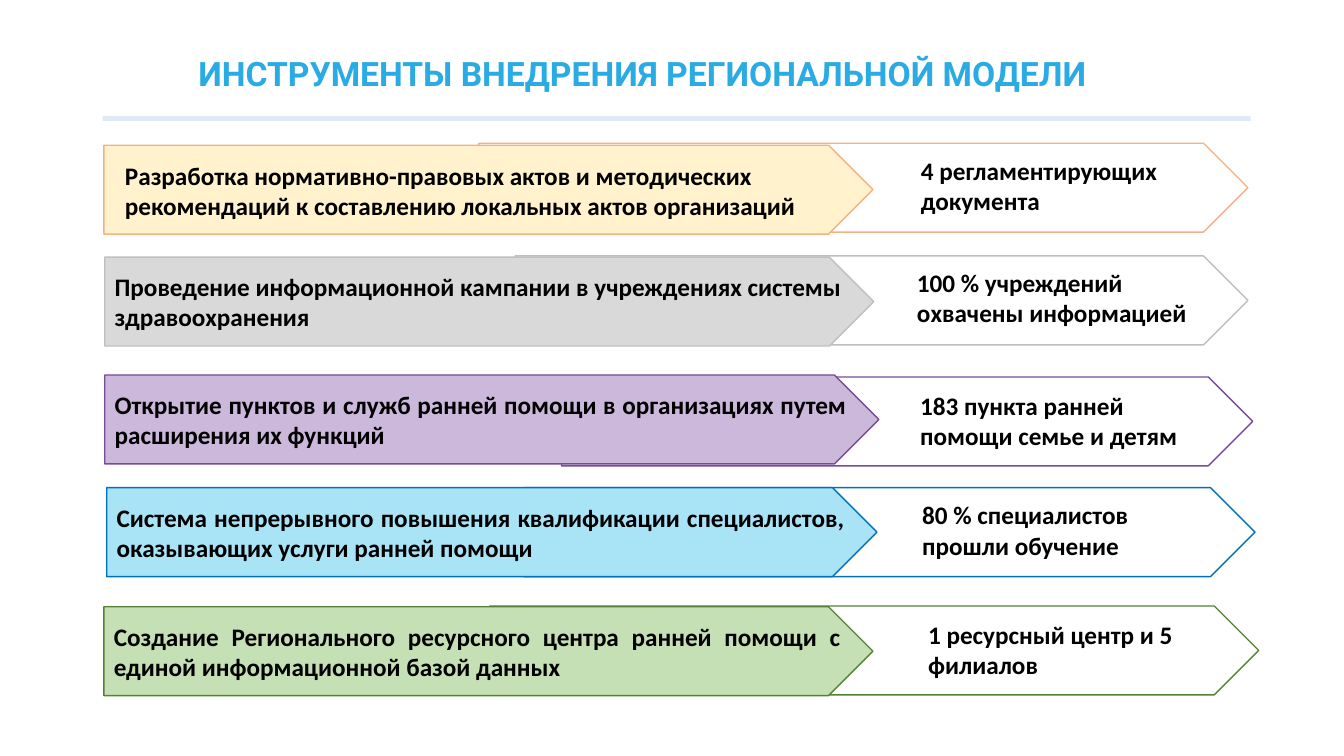
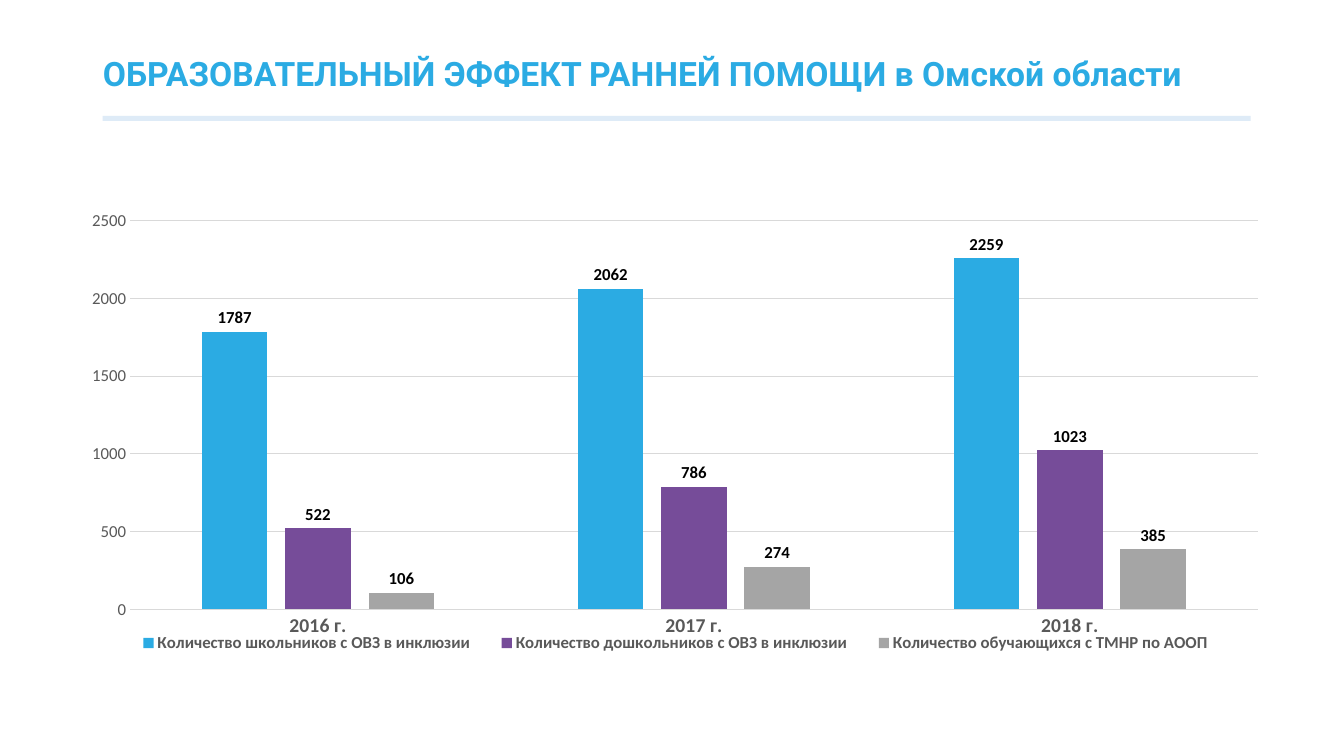
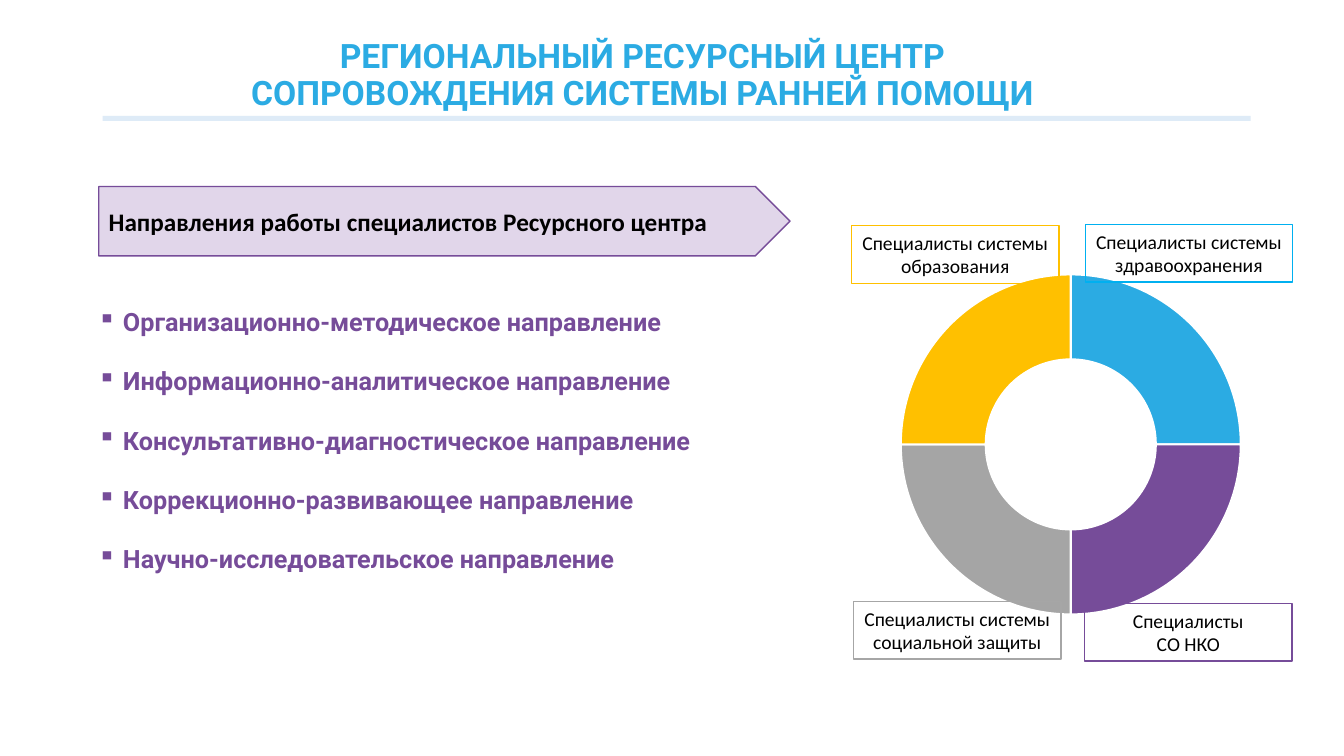
from lxml.etree import SubElement
from pptx import Presentation
from pptx.chart.data import CategoryChartData
from pptx.dml.color import RGBColor
from pptx.enum.chart import XL_CHART_TYPE, XL_LABEL_POSITION, XL_LEGEND_POSITION, XL_TICK_MARK
from pptx.enum.shapes import MSO_SHAPE
from pptx.enum.text import MSO_ANCHOR, PP_ALIGN
from pptx.oxml.ns import qn
from pptx.util import Cm, Pt

COLORS = {
    "sky": "2BABE3", "band": "DEEBF7", "black": "000000", "white": "FFFFFF",
    "purple": "764C99", "lilac": "CBB8DA", "pale_lilac": "E1D6EA",
    "peach": "F4B183", "cream": "FFF2CC", "silver": "BFBFBF", "light_gray": "D9D9D9",
    "blue": "0070C0", "pale_blue": "A8E3F6", "green": "548235", "pale_green": "C5E0B4",
    "gray": "A5A5A5", "box_gray": "A6A6A6", "amber": "FFC000", "cyan": "00B0F0",
    "axis_text": "595959",
}
TITLE = {"name": "Roboto", "size": Pt(24), "bold": True}
STRONG = {"name": "Calibri", "size": Pt(18), "bold": True}
PLAIN = {"name": "Calibri", "size": Pt(14), "bold": False}
BULLET = {"name": "Roboto", "size": Pt(18), "bold": True}
CENTERED = {"alignment": PP_ALIGN.CENTER}
JUSTIFIED = {"alignment": PP_ALIGN.JUSTIFY}
LEFT = {"alignment": PP_ALIGN.LEFT}
ROW_H = 2.24

ROWS = [
    {"at": (2.62, 3.66), "width": 19.38, "fill": "cream", "line": "peach",
     "back": (9.45, -0.05, 19.38), "note_at": (20.34, 0.13), "inset": True,
     "text": "Разработка нормативно-правовых актов и методических рекомендаций "
             "к составлению локальных актов организаций",
     "note": "4 регламентирующих документа"},
    {"at": (2.64, 6.48), "width": 19.38, "fill": "light_gray", "line": "silver",
     "back": (10.34, -0.03, 18.47), "note_at": (20.22, 0.13), "inset": False,
     "text": "Проведение информационной кампании в учреждениях системы здравоохранения",
     "note": "100 % учреждений охвачены информацией"},
    {"at": (2.64, 9.45), "width": 19.51, "fill": "lilac", "line": "purple",
     "back": (11.51, 0.05, 17.42), "note_at": (20.3, 0.25), "inset": False,
     "text": "Открытие пунктов и служб ранней помощи в организациях путем расширения их функций",
     "note": "183 пункта ранней помощи семье и детям"},
    {"at": (2.69, 12.29), "width": 19.41, "fill": "pale_blue", "line": "blue",
     "back": (10.52, 0, 18.42), "note_at": (20.3, 0.18), "inset": False,
     "text": "Система непрерывного повышения квалификации специалистов, "
             "оказывающих услуги ранней помощи",
     "note": "80 % специалистов прошли обучение"},
    {"at": (2.62, 15.29), "width": 19.38, "fill": "pale_green", "line": "green",
     "back": (9.72, -0.02, 19.38), "note_at": (20.52, 0.18), "inset": False,
     "text": "Создание Регионального ресурсного центра ранней помощи "
             "с единой информационной базой данных",
     "note": "1 ресурсный центр и 5 филиалов"},
]
YEARS = ["2016 г.", "2017 г.", "2018 г."]
PUPILS = [
    ("Количество школьников с ОВЗ в инклюзии", (1787, 2062, 2259), "sky"),
    ("Количество дошкольников с ОВЗ в инклюзии", (522, 786, 1023), "purple"),
    ("Количество обучающихся с ТМНР по АООП", (106, 274, 385), "gray"),
]
DIRECTIONS = [
    "Организационно-методическое направление",
    "Информационно-аналитическое направление",
    "Консультативно-диагностическое направление",
    "Коррекционно-развивающее направление",
    "Научно-исследовательское направление",
]
SPECIALISTS = [
    (-0.89, -0.15, "amber", ["Специалисты системы образования"]),
    (5, -0.18, "cyan", ["Специалисты системы здравоохранения"]),
    (4.98, 9.37, "purple", ["Специалисты", "СО НКО"]),
    (-0.84, 9.32, "box_gray", ["Специалисты системы социальной защиты"]),
]


def rgb(name):
    return RGBColor.from_string(COLORS[name])


def box(*lengths):
    return [Cm(v) for v in lengths]


def apply(obj, values):
    for key, value in values.items():
        setattr(obj, key, value)


def style(font, values, color):
    apply(font, values)
    font.color.rgb = rgb(color)


def write(tf, lines, font, para, color="black", anchor=MSO_ANCHOR.MIDDLE):
    apply(tf, {"word_wrap": True, "vertical_anchor": anchor})
    for i, line in enumerate(lines):
        p = tf.add_paragraph() if i else tf.paragraphs[0]
        apply(p, para)
        r = p.add_run()
        r.text = line
        style(r.font, font, color)


def add_text(s, at, *args, **kwargs):
    write(s.shapes.add_textbox(*box(*at)).text_frame, *args, **kwargs)


def add_outline(s, kind, at, fill=None, line=None):
    sp = s.shapes.add_shape(kind, *box(*at))
    sp.shadow.inherit = False
    if fill:
        sp.fill.solid()
        sp.fill.fore_color.rgb = rgb(fill)
    else:
        sp.fill.background()
    if line:
        sp.line.color.rgb = rgb(line)
        sp.line.width = Pt(1)
    else:
        sp.line.fill.background()
    return sp


def add_titled_slide(prs, lines):
    s = prs.slides.add_slide(prs.slide_layouts[6])
    add_text(s, (2.34, 0.81, 27.7, 2.21), lines, TITLE, {**CENTERED, "line_spacing": 0.9}, "sky")
    add_outline(s, MSO_SHAPE.RECTANGLE, (2.59, 2.92, 28.93, 0.13), "band")
    return s


def add_tool_row(s, row):
    x, y = row["at"]
    dx, dy, back_w = row["back"]
    add_outline(s, MSO_SHAPE.PENTAGON, (x + dx, y + dy, back_w, ROW_H), line=row["line"])
    sp = add_outline(s, MSO_SHAPE.PENTAGON, (x, y, row["width"], ROW_H), row["fill"], row["line"])
    if row["inset"]:
        add_text(s, (x + 0.28, y + 0.25, 18.19, 1.8), [row["text"]], STRONG, LEFT,
                 anchor=MSO_ANCHOR.TOP)
    else:
        write(sp.text_frame, [row["text"]], STRONG, JUSTIFIED)
    nx, ny = row["note_at"]
    add_text(s, (x + nx, y + ny, 7.44, 1.8), [row["note"]], STRONG, LEFT, anchor=MSO_ANCHOR.TOP)


def set_layout(parent, index, sizes, inner=False):
    for old in parent.findall(qn("c:layout")):
        parent.remove(old)
    layout = SubElement(parent, qn("c:layout"))
    parent.insert(index, layout)
    manual = SubElement(layout, qn("c:manualLayout"))
    values = {"layoutTarget": "inner"} if inner else {}
    values.update({"xMode": "edge", "yMode": "edge"}, **sizes)
    for tag, value in values.items():
        SubElement(manual, qn("c:" + tag)).set("val", str(value))


def add_chart(s, kind, at, categories, series):
    data = CategoryChartData()
    data.categories = categories
    for name, values in series:
        data.add_series(name, values)
    chart = s.shapes.add_chart(kind, *box(*at), data).chart
    apply(chart, {"has_title": False, "has_legend": False})
    style(chart.font, {"name": "Calibri", "size": Pt(10)}, "black")
    return chart


def add_pupil_chart(s, at):
    chart = add_chart(s, XL_CHART_TYPE.COLUMN_CLUSTERED, at, YEARS, [row[:2] for row in PUPILS])
    plot = chart.plots[0]
    apply(plot, {"gap_width": 219, "overlap": -27, "vary_by_categories": False})
    for series, (_, _, color) in zip(plot.series, PUPILS):
        series.format.fill.solid()
        series.format.fill.fore_color.rgb = rgb(color)
        labels = series.data_labels
        apply(labels, {"show_value": True, "position": XL_LABEL_POSITION.OUTSIDE_END})
        style(labels.font, {**STRONG, "size": Pt(12)}, "black")
    cat, val = chart.category_axis, chart.value_axis
    for axis, size, bold in ((cat, 14, True), (val, 12, False)):
        apply(axis, {"major_tick_mark": XL_TICK_MARK.NONE, "minor_tick_mark": XL_TICK_MARK.NONE})
        style(axis.tick_labels.font, {**PLAIN, "size": Pt(size), "bold": bold}, "axis_text")
    val.format.line.fill.background()
    for line in (cat.format.line, val.major_gridlines.format.line):
        line.color.rgb = rgb("light_gray")
        line.width = Pt(0.75)
    chart.has_legend = True
    legend = chart.legend
    apply(legend, {"position": XL_LEGEND_POSITION.BOTTOM, "include_in_layout": False})
    style(legend.font, {**STRONG, "size": Pt(12)}, "axis_text")
    set_layout(chart._chartSpace.chart.plotArea, 0,
               {"x": 0.05, "y": 0.04, "w": 0.93, "h": 0.81}, inner=True)
    set_layout(legend._element, 1, {"x": 0.04, "y": 0.89, "w": 0.92, "h": 0.06})


def add_directions(s, x, y):
    sp = add_outline(s, MSO_SHAPE.PENTAGON, (x, y, 17.42, 1.75), "pale_lilac", "purple")
    write(sp.text_frame, ["Направления работы специалистов Ресурсного центра"], STRONG, JUSTIFIED)
    tb = s.shapes.add_textbox(*box(x - 0.28, y + 2.51, 18.34, 9.5))
    write(tb.text_frame, DIRECTIONS, BULLET,
          {**JUSTIFIED, "line_spacing": 1.5, "space_before": Pt(10)}, "purple", MSO_ANCHOR.TOP)
    for p in tb.text_frame.paragraphs:
        pPr = p._p.get_or_add_pPr()
        pPr.set("marL", str(Cm(0.64)))
        pPr.set("indent", str(Cm(-0.64)))
        color = SubElement(pPr, qn("a:buClr"))
        SubElement(color, qn("a:srgbClr")).set("val", COLORS["purple"])
        SubElement(pPr, qn("a:buChar")).set("char", "▪")


def add_specialist_ring(s, x, y):
    chart = add_chart(s, XL_CHART_TYPE.DOUGHNUT, (x, y, 9.27, 10.72),
                      ["1", "2", "3", "4"], [("Series 1", (25, 25, 25, 25))])
    plot = chart.plots[0]
    plot._element.find(qn("c:holeSize")).set("val", "75")
    for i, color in enumerate(("sky", "purple", "gray", "amber")):
        fmt = plot.series[0].points[i].format
        fmt.fill.solid()
        fmt.fill.fore_color.rgb = rgb(color)
        fmt.line.color.rgb = rgb("white")
        fmt.line.width = Pt(1.5)
    for dx, dy, color, lines in SPECIALISTS:
        sp = add_outline(s, MSO_SHAPE.RECTANGLE, (x + dx, y + dy, 5.23, 1.45), line=color)
        write(sp.text_frame, lines, PLAIN, CENTERED, anchor=MSO_ANCHOR.TOP)


def main():
    prs = Presentation()
    apply(prs, {"slide_width": Cm(33.87), "slide_height": Cm(19.05)})
    s = add_titled_slide(prs, ["ИНСТРУМЕНТЫ ВНЕДРЕНИЯ РЕГИОНАЛЬНОЙ МОДЕЛИ"])
    for row in ROWS:
        add_tool_row(s, row)
    s = add_titled_slide(prs, ["ОБРАЗОВАТЕЛЬНЫЙ ЭФФЕКТ РАННЕЙ ПОМОЩИ в Омской области"])
    add_pupil_chart(s, (1.75, 5.08, 30.56, 12.09))
    s = add_titled_slide(prs, ["РЕГИОНАЛЬНЫЙ РЕСУРСНЫЙ ЦЕНТР",
                               "СОПРОВОЖДЕНИЯ СИСТЕМЫ РАННЕЙ ПОМОЩИ"])
    add_directions(s, 2.49, 4.7)
    add_specialist_ring(s, 22.35, 5.84)
    prs.save("out.pptx")


if __name__ == "__main__":
    main()
